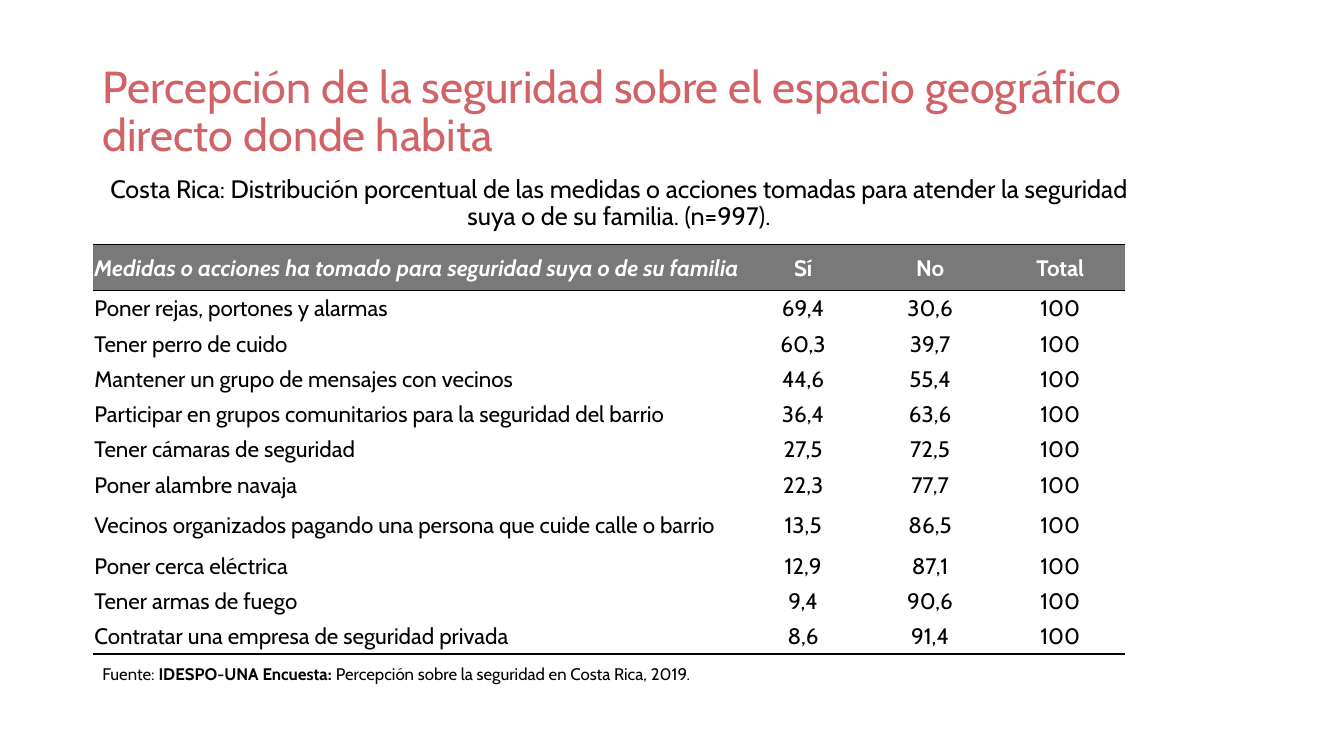
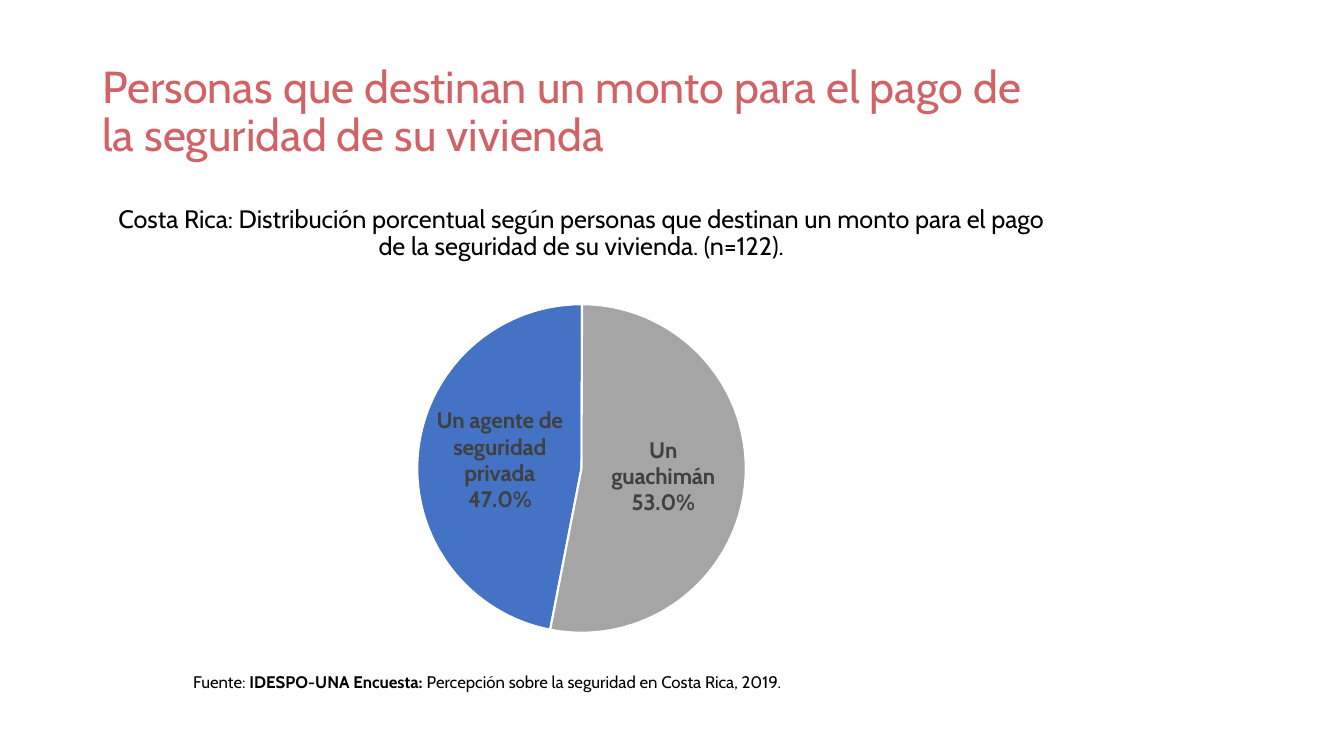
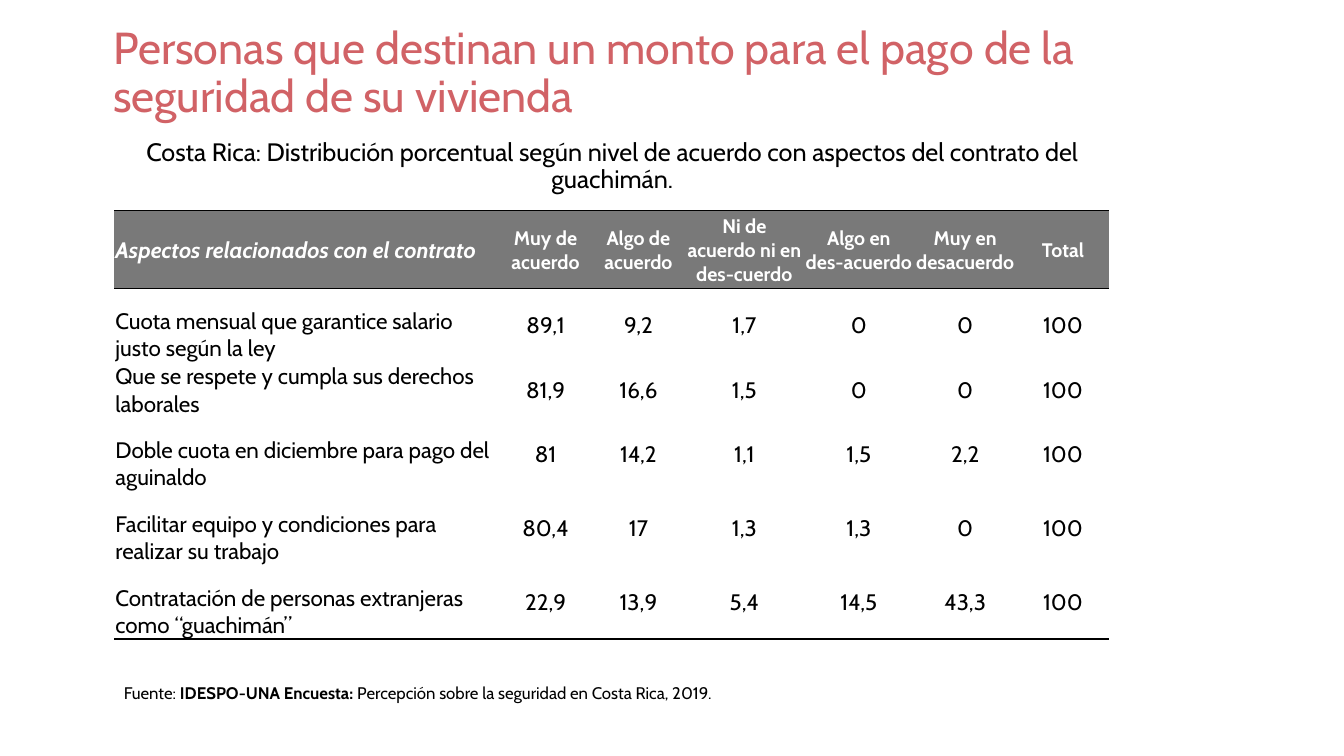
from lxml import etree
from pptx import Presentation
from pptx import util as u
from pptx.chart.data import CategoryChartData
from pptx.dml.color import RGBColor
from pptx.enum import chart as charts
from pptx.enum import text
from pptx.oxml import parse_xml
from pptx.oxml.ns import nsdecls, qn

MID, LOW = text.MSO_ANCHOR.MIDDLE, text.MSO_ANCHOR.BOTTOM
LEFT, MIDDLE = text.PP_ALIGN.LEFT, text.PP_ALIGN.CENTER
PLAIN = "{2D5ABB26-0587-4C30-8999-92F81FD0307C}"


def tint(code):
    return RGBColor.from_string(code)


class Deck:
    FONT = "Cabin"
    ROSE, BLACK, WHITE, GREY = "D16266", "000000", "FFFFFF", "797979"

    def __init__(self):
        self.prs = Presentation()
        self.prs.slide_width, self.prs.slide_height = u.Cm(33.87), u.Cm(19.05)
        self.slide = None

    def page(self):
        self.slide = self.prs.slides.add_slide(self.prs.slide_layouts[6])

    def style(self, font, size, color, bold=False, italic=False):
        font.name, font.size = self.FONT, u.Pt(size)
        font.color.rgb = tint(color)
        font.bold, font.italic = bold, italic

    def run(self, para, words, size, color, bold=False, italic=False):
        run = para.add_run()
        run.text = words
        self.style(run.font, size, color, bold, italic)

    def box(self, left, top, width, height):
        shape = self.slide.shapes.add_textbox(*map(u.Cm, (left, top, width, height)))
        shape.text_frame.word_wrap = True
        return shape.text_frame

    # Shared text elements
    def title(self, left, top, width, words):
        frame = self.box(left, top, width, 3.68)
        frame.vertical_anchor = MID
        para = frame.paragraphs[0]
        para.line_spacing = 0.9
        self.run(para, words, 32, self.ROSE)

    def lead(self, left, top, width, words):
        para = self.box(left, top, width, 12.09).paragraphs[0]
        para.alignment, para.line_spacing = MIDDLE, 0.9
        self.run(para, words, 18, self.BLACK)

    def source(self, left, top):
        frame = self.box(left, top, 16.3, 0.77)
        frame.auto_size = text.MSO_AUTO_SIZE.SHAPE_TO_FIT_TEXT
        para = frame.paragraphs[0]
        self.run(para, "Fuente: ", 12, self.BLACK)
        self.run(para, "IDESPO-UNA Encuesta: ", 12, self.BLACK, bold=True)
        self.run(para, "Percepción sobre la seguridad en Costa Rica, 2019.", 12, self.BLACK)

    # Tables
    def edges(self, cell, above, below):
        props = cell._tc.get_or_add_tcPr()
        for side, width in (("L", 0), ("R", 0), ("T", above), ("B", below)):
            line = etree.SubElement(props, qn(f"a:ln{side}"), w=str(u.Pt(width)))
            if width:
                fill = etree.SubElement(line, qn("a:solidFill"))
                etree.SubElement(fill, qn("a:srgbClr"), val=self.BLACK)
            else:
                etree.SubElement(line, qn("a:noFill"))

    def cell(self, cell, words, size, color, align, anchor, bold=False, italic=False):
        cell.margin_left = cell.margin_right = cell.margin_top = u.Cm(0.03)
        cell.margin_bottom = 0
        cell.vertical_anchor = anchor
        frame = cell.text_frame
        for i, part in enumerate(words.split("\n")):
            para = frame.add_paragraph() if i else frame.paragraphs[0]
            para.alignment = align
            self.run(para, part, size, color, bold, italic)

    def table(self, left, top, widths, heights, head, rows, small=16, anchor=MID):
        grid = [head] + [[name, *nums.split(), "100"] for name, nums in rows]
        shape = self.slide.shapes.add_table(
            len(grid), len(head), u.Cm(left), u.Cm(top),
            u.Cm(sum(widths)), u.Cm(sum(heights)))
        table = shape.table
        table.first_row = table.horz_banding = False
        table._tbl.tblPr.find(qn("a:tableStyleId")).text = PLAIN
        for col, width in zip(table.columns, widths):
            col.width = u.Cm(width)
        for row, height in zip(table.rows, heights):
            row.height = u.Cm(height)
        last = len(grid) - 1
        for r, line in enumerate(grid):
            for c, words in enumerate(line):
                cell = table.cell(r, c)
                align = MIDDLE if c else LEFT
                self.edges(cell, 1 if r < 2 else 0, {0: 1, last: 2}.get(r, 0))
                if r == 0:
                    cell.fill.solid()
                    cell.fill.fore_color.rgb = tint(self.GREY)
                    self.cell(cell, words, small if c else 16, self.WHITE,
                              align, MID, True, c == 0)
                else:
                    cell.fill.background()
                    self.cell(cell, words, 16, self.BLACK, align,
                              MID if c else anchor)

    # Pie chart
    def pie(self, left, top, width, height, parts, start):
        data = CategoryChartData()
        data.categories = [name for name, _, _ in parts]
        data.add_series("Series 1", [val for _, val, _ in parts])
        chart = self.slide.shapes.add_chart(
            charts.XL_CHART_TYPE.PIE, *map(u.Cm, (left, top, width, height)), data).chart
        chart.has_title = chart.has_legend = False
        self.style(chart.font, 10, self.BLACK)
        plot = chart.plots[0]
        plot.vary_by_categories = True
        series = plot.series[0]
        for i, (_, _, color) in enumerate(parts):
            form = series.points[i].format
            form.fill.solid()
            form.fill.fore_color.rgb = tint(color)
            form.line.color.rgb = tint(self.WHITE)
            form.line.width = u.Pt(1.5)
        tags = series.data_labels
        tags.show_value = False
        tags.show_category_name = tags.show_percentage = True
        tags.number_format, tags.number_format_is_linked = "0.0%", False
        tags.position = charts.XL_LABEL_POSITION.CENTER
        self.style(tags.font, 16, "404040", bold=True)
        # Label line break, first slice angle and plot area
        gap = etree.Element(qn("c:separator"))
        gap.text = "\n"
        tags._element.find(qn("c:showBubbleSize")).addnext(gap)
        pie = plot._element
        for old in pie.findall(qn("c:firstSliceAng")):
            pie.remove(old)
        etree.SubElement(pie, qn("c:firstSliceAng"), val=str(start))
        area = pie.getparent()
        for old in area.findall(qn("c:layout")):
            area.remove(old)
        spots = "".join(f'<c:{k} val="{v}"/>' for k, v in (
            ("layoutTarget", "inner"), ("xMode", "edge"), ("yMode", "edge"),
            ("x", 0.29), ("y", 0.1), ("w", 0.42), ("h", 0.83)))
        area.insert(0, parse_xml(
            f'<c:layout {nsdecls("c")}><c:manualLayout>{spots}</c:manualLayout></c:layout>'))


def main():
    deck = Deck()

    # Measures taken
    deck.page()
    deck.title(2.33, 1.01, 27.13,
               "Percepción de la seguridad sobre el espacio geográfico directo donde habita")
    deck.lead(2.33, 4.32, 26.54,
              "Costa Rica: Distribución porcentual de las medidas o acciones tomadas "
              "para atender la seguridad suya o de su familia. (n=997).")
    deck.table(
        2.35, 6.17, [16.33, 3.12, 3.28, 3.28], [1.15] + [0.89] * 6 + [1.15] + [0.89] * 3,
        ["Medidas o acciones ha tomado para seguridad suya o de su familia",
         "Sí", "No", "Total"],
        [("Poner rejas, portones y alarmas", "69,4 30,6"),
         ("Tener perro de cuido", "60,3 39,7"),
         ("Mantener un grupo de mensajes con vecinos", "44,6 55,4"),
         ("Participar en grupos comunitarios para la seguridad del barrio", "36,4 63,6"),
         ("Tener cámaras de seguridad", "27,5 72,5"),
         ("Poner alambre navaja", "22,3 77,7"),
         ("Vecinos organizados pagando una persona que cuide calle o barrio", "13,5 86,5"),
         ("Poner cerca eléctrica", "12,9 87,1"),
         ("Tener armas de fuego", "9,4 90,6"),
         ("Contratar una empresa de seguridad privada", "8,6 91,4")])
    deck.source(2.33, 16.59)

    # Who is paid
    paid = "Personas que destinan un monto para el pago de la seguridad de su vivienda"
    deck.page()
    deck.title(2.33, 1.01, 24.1, paid)
    deck.lead(2.6, 5.08, 24.1,
              "Costa Rica: Distribución porcentual según personas que destinan un monto "
              "para el pago de la seguridad de su vivienda. (n=122).")
    deck.pie(4.8, 6.6, 19.71, 10.11,
             [("Un agente de seguridad privada", 47, "4472C4"),
              ("Un guachimán", 53, "A5A5A5")], 191)
    deck.source(4.62, 16.81)

    # Contract terms
    deck.page()
    deck.title(2.6, 0.03, 26.42, paid)
    deck.lead(2.87, 3.4, 25.12,
              "Costa Rica: Distribución porcentual según nivel de acuerdo con aspectos "
              "del contrato del guachimán.")
    deck.source(2.87, 17.09)
    deck.table(
        2.88, 5.31, [9.7, 2.34, 2.34, 3, 2.77, 2.59, 2.34],
        [1.96, 1.86, 1.37] + [1.86] * 3,
        ["Aspectos relacionados con el contrato", "Muy de acuerdo", "Algo de acuerdo",
         "Ni de acuerdo ni en\ndes-cuerdo", "Algo en\ndes-acuerdo",
         "Muy en\ndesacuerdo", "Total"],
        [("Cuota mensual que garantice salario justo según la ley", "89,1 9,2 1,7 0 0"),
         ("Que se respete y cumpla sus derechos laborales", "81,9 16,6 1,5 0 0"),
         ("Doble cuota en diciembre para pago del aguinaldo", "81 14,2 1,1 1,5 2,2"),
         ("Facilitar equipo y condiciones para realizar su trabajo", "80,4 17 1,3 1,3 0"),
         ("Contratación de personas extranjeras como “guachimán”",
          "22,9 13,9 5,4 14,5 43,3")],
        small=14, anchor=LOW)

    deck.prs.save("out.pptx")


if __name__ == "__main__":
    main()
